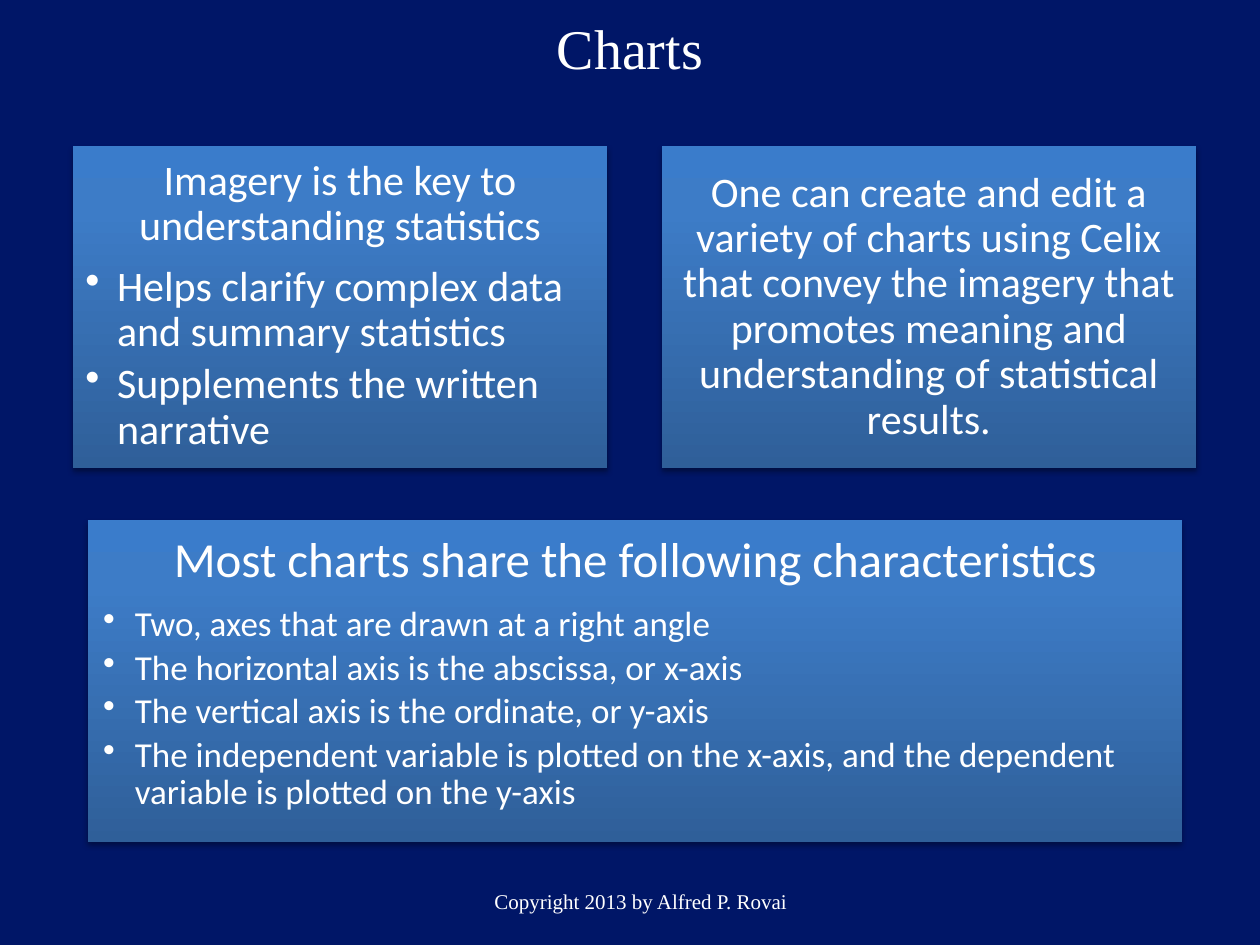
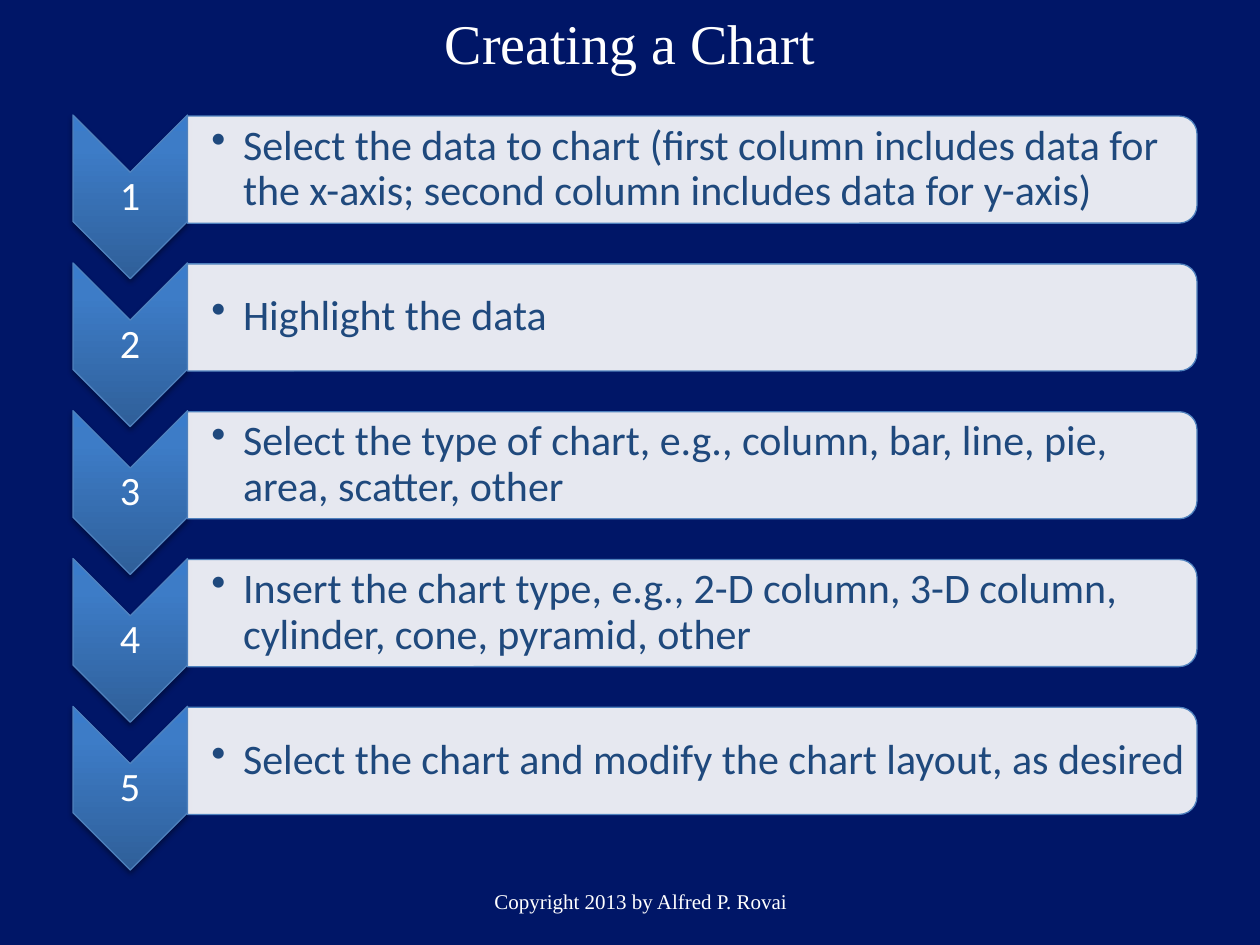
from dataclasses import dataclass

from lxml import etree
from pptx import Presentation
from pptx.dml.color import RGBColor
from pptx.enum import shapes, text
from pptx.oxml import ns
from pptx.util import Cm, Pt


@dataclass(frozen=True)
class Theme:
    navy: str = "001667"
    white: str = "FFFFFF"
    ink: str = "1F497D"
    outline: str = "4F81BD"
    gradient: tuple = ((0, "2F5F99"), (80, "3D7CC7"), (100, "3A7CCB"))
    title_font: str = "Times New Roman"
    body_font: str = "Calibri"
    title_size: int = 32
    footer_size: int = 12
    heading_size: int = 28
    body_size: int = 24
    number_size: int = 23
    detail_size: int = 20
    line_spacing: float = 0.9
    heading_gap: float = 0.38
    bullet_gap: float = 0.16


THEME = Theme()
CENTER = text.PP_ALIGN.CENTER
MIDDLE = text.MSO_ANCHOR.MIDDLE
TOP = text.MSO_ANCHOR.TOP
STEPS = (
    "Select the data to chart (first column includes data for the x-axis; "
    "second column includes data for y-axis)",
    "Highlight the data",
    "Select the type of chart, e.g., column, bar, line, pie, area, scatter, other",
    "Insert the chart type, e.g., 2-D column, 3-D column, cylinder, cone, pyramid, other",
    "Select the chart and modify the chart layout, as desired",
)


def box(left, top, width, height):
    return [Cm(value) for value in (left, top, width, height)]


def child(parent, tag, **attributes):
    return etree.SubElement(parent, ns.qn(tag), attributes)


def add_run(paragraph, words, size, color=THEME.white, font=THEME.body_font):
    run = paragraph.add_run()
    run.text = words
    run.font.size = Pt(size)
    run.font.name = font
    run.font.color.rgb = RGBColor.from_string(color)


def prepare_frame(frame, anchor, inset, left_inset=None):
    frame.word_wrap = True
    frame.vertical_anchor = anchor
    frame.margin_top = frame.margin_right = frame.margin_bottom = Cm(inset)
    frame.margin_left = Cm(inset if left_inset is None else left_inset)
    return frame.paragraphs[0]


def write_heading(paragraph, words, size):
    paragraph.alignment = CENTER
    paragraph.line_spacing = THEME.line_spacing
    paragraph.space_after = Pt(round(size * THEME.heading_gap, 1))
    add_run(paragraph, words, size)


def write_bullet(paragraph, words, size, color=THEME.white):
    paragraph.alignment = text.PP_ALIGN.LEFT
    paragraph.level = 1
    paragraph.line_spacing = THEME.line_spacing
    paragraph.space_after = Pt(round(size * THEME.bullet_gap, 1))
    properties = paragraph._p.get_or_add_pPr()
    properties.set("marL", str(Cm(0.64)))
    properties.set("indent", str(-Cm(0.64)))
    child(properties, "a:buChar", char="•")
    add_run(paragraph, words, size, color)


def fill_gradient(shape):
    shape.fill.gradient()
    gradient = shape._element.spPr.find(ns.qn("a:gradFill"))
    for part in list(gradient):
        gradient.remove(part)
    gradient.set("rotWithShape", "0")
    stops = child(gradient, "a:gsLst")
    for position, color in THEME.gradient:
        stop = child(stops, "a:gs", pos=str(position * 1000))
        child(stop, "a:srgbClr", val=color)
    child(gradient, "a:lin", ang="16200000", scaled="0")


def cast_shadow(shape):
    shape.shadow.inherit = False
    effects = shape._element.spPr.find(ns.qn("a:effectLst"))
    shadow = child(effects, "a:outerShdw", blurRad=str(Pt(3.1)), dist=str(Pt(1.8)),
                   dir="5400000", rotWithShape="0")
    black = child(shadow, "a:srgbClr", val="000000")
    child(black, "a:alpha", val="35000")


def outline(shape):
    shape.line.color.rgb = RGBColor.from_string(THEME.outline)
    shape.line.width = Pt(0.75)


def add_quarter_turned(slide, kind, left, top, width, height):
    shift = (width - height) / 2
    shape = slide.shapes.add_shape(kind, *box(left + shift, top - shift, height, width))
    shape.rotation = 90
    outline(shape)
    return shape


def add_titled_slide(deck, title, title_height):
    slide = deck.slides.add_slide(deck.slide_layouts[5])
    heading = slide.shapes.title
    heading.left, heading.top, heading.width, heading.height = box(1.27, 0, 22.86, title_height)
    footer = slide.shapes.add_textbox(*box(4.45, 17.65, 16.94, 1.02))
    for shape, words, size in ((heading, title, THEME.title_size),
                               (footer, "Copyright 2013 by Alfred P. Rovai", THEME.footer_size)):
        paragraph = prepare_frame(shape.text_frame, MIDDLE, 0.13)
        paragraph.alignment = CENTER
        add_run(paragraph, words, size, font=THEME.title_font)
    return slide


def add_panel(slide, place, heading, bullets=(), heading_size=THEME.body_size,
              bullet_size=THEME.body_size, inset=0.25):
    panel = slide.shapes.add_shape(shapes.MSO_SHAPE.RECTANGLE, *box(*place))
    fill_gradient(panel)
    panel.line.fill.background()
    cast_shadow(panel)
    frame = panel.text_frame
    first = prepare_frame(frame, TOP if bullets else MIDDLE, inset)
    write_heading(first, heading, heading_size)
    for words in bullets:
        write_bullet(frame.add_paragraph(), words, bullet_size)


def add_step(slide, number, words, top):
    chevron = add_quarter_turned(slide, shapes.MSO_SHAPE.CHEVRON, 1.47, top, 2.31, 3.3)
    fill_gradient(chevron)
    cast_shadow(chevron)
    label = slide.shapes.add_textbox(*box(1.47, top + 1.16, 2.31, 0.99))
    write_heading(prepare_frame(label.text_frame, MIDDLE, 0.05), str(number), THEME.number_size)

    bar = add_quarter_turned(slide, shapes.MSO_SHAPE.ROUND_2_SAME_RECTANGLE,
                             3.78, top + 0.02, 20.35, 2.16)
    bar.shadow.inherit = False
    bar.fill.solid()
    bar.fill.fore_color.rgb = RGBColor.from_string(THEME.white)
    color = bar._element.spPr.find(ns.qn("a:solidFill"))[0]
    child(color, "a:alpha", val="90000")
    instruction = slide.shapes.add_textbox(*box(3.78, top + 0.13, 20.22, 1.93))
    write_bullet(prepare_frame(instruction.text_frame, MIDDLE, 0.05, 0.48),
                 words, THEME.body_size, THEME.ink)


def build_charts_slide(deck):
    slide = add_titled_slide(deck, "Charts", 1.9)
    add_panel(slide, (1.47, 2.95, 10.77, 6.48),
              "Imagery is the key to understanding statistics",
              ("Helps clarify complex data and summary statistics",
               "Supplements the written narrative"))
    add_panel(slide, (13.34, 2.95, 10.77, 6.48),
              "One can create and edit a variety of charts using Celix that convey the "
              "imagery that promotes meaning and understanding of statistical results.")
    add_panel(slide, (1.78, 10.49, 22.05, 6.48),
              "Most charts share the following characteristics",
              ("Two, axes that are drawn at a right angle",
               "The horizontal axis is the abscissa, or x-axis",
               "The vertical axis is the ordinate, or y-axis",
               "The independent variable is plotted on the x-axis, and the dependent "
               "variable is plotted on the y-axis"),
              THEME.heading_size, THEME.detail_size, 0.3)


def build_steps_slide(deck):
    slide = add_titled_slide(deck, "Creating a Chart", 1.7)
    for index, words in enumerate(STEPS):
        add_step(slide, index + 1, words, 2.32 + index * 2.98)


def main():
    deck = Presentation()
    deck.slide_width, deck.slide_height = Cm(25.4), Cm(19.05)
    backdrop = deck.slide_master.background.fill
    backdrop.solid()
    backdrop.fore_color.rgb = RGBColor.from_string(THEME.navy)
    build_charts_slide(deck)
    build_steps_slide(deck)
    deck.save("out.pptx")


if __name__ == "__main__":
    main()
